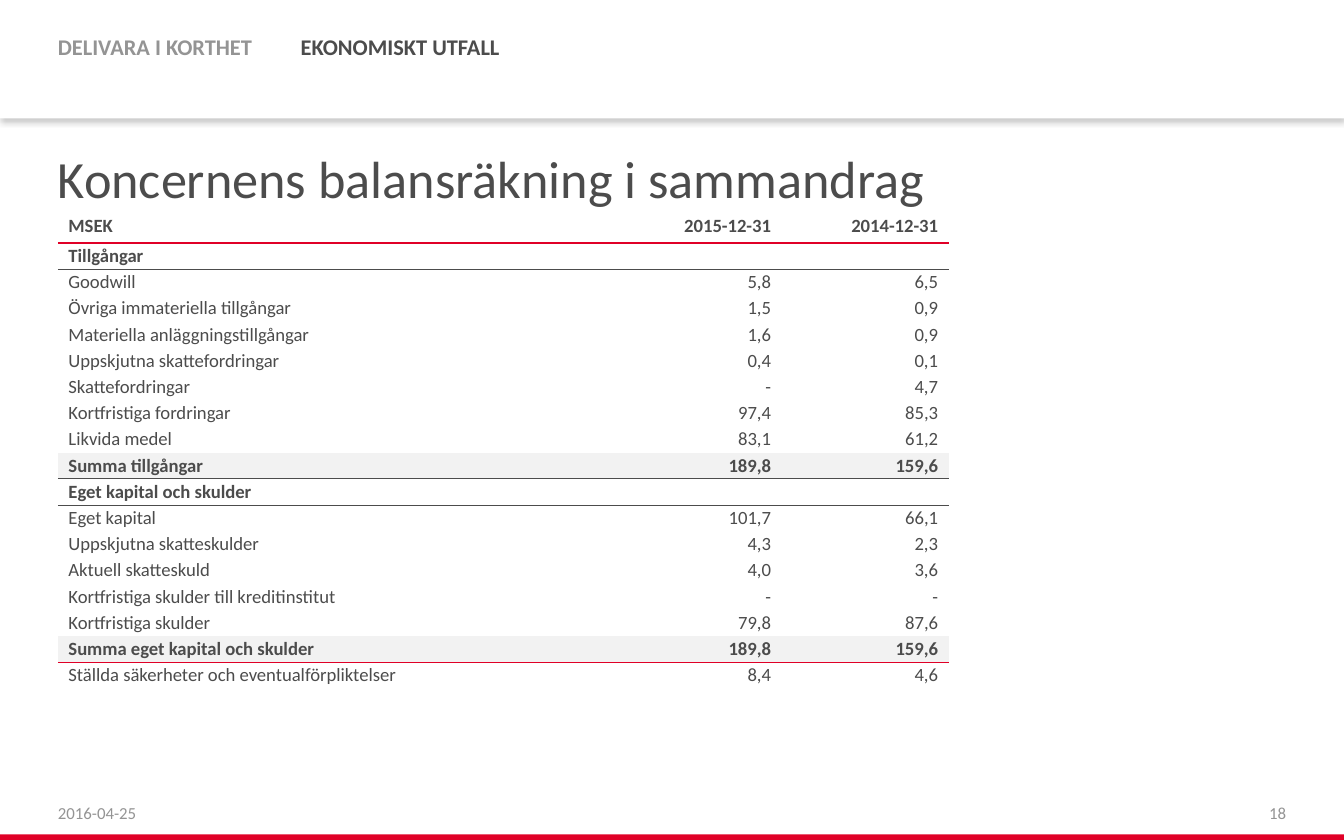
from dataclasses import dataclass
from lxml.etree import SubElement
from pptx import Presentation
from pptx.dml.color import RGBColor
from pptx.enum.shapes import MSO_SHAPE
from pptx.enum.text import MSO_ANCHOR, PP_ALIGN
from pptx.oxml.ns import qn
from pptx.util import Pt


@dataclass(frozen=True)
class Theme:
    font: str = "Calibri"
    ink: str = "4C4C4C"
    mute: str = "949494"
    red: str = "E00027"
    band: str = "F2F2F2"
    white: str = "FFFFFF"
    plain: str = "{2D5ABB26-0587-4C30-8999-92F81FD0307C}"
    title: float = 28
    nav: float = 12
    body: float = 10
    foot: float = 9


LEFT = 31
HEAD = 63.4
NAVS = [("DELIVARA I KORTHET", 25.2, "mute"), ("EKONOMISKT UTFALL", 155.3, "ink")]
COLS = [298.2, 89.5, 89.5]
ROWS = [
    ("head", "MSEK", "2015-12-31", "2014-12-31"),
    ("part", "Tillgångar", "", ""),
    ("item", "Goodwill", "5,8", "6,5"),
    ("item", "Övriga immateriella tillgångar", "1,5", "0,9"),
    ("item", "Materiella anläggningstillgångar", "1,6", "0,9"),
    ("item", "Uppskjutna skattefordringar", "0,4", "0,1"),
    ("item", "Skattefordringar", "-", "4,7"),
    ("item", "Kortfristiga fordringar", "97,4", "85,3"),
    ("item", "Likvida medel", "83,1", "61,2"),
    ("sum", "Summa tillgångar", "189,8", "159,6"),
    ("part", "Eget kapital och skulder", "", ""),
    ("item", "Eget kapital", "101,7", "66,1"),
    ("item", "Uppskjutna skatteskulder", "4,3", "2,3"),
    ("item", "Aktuell skatteskuld", "4,0", "3,6"),
    ("item", "Kortfristiga skulder till kreditinstitut", "-", "-"),
    ("item", "Kortfristiga skulder", "79,8", "87,6"),
    ("total", "Summa eget kapital och skulder", "189,8", "159,6"),
    ("item", "Ställda säkerheter och eventualförpliktelser", "8,4", "4,6"),
]
LINES = {"head": ("red", 1), "part": ("ink", 0.5), "sum": ("ink", 0.5), "total": ("red", 0.5)}


def write(frame, text, *, look, size, color, bold=False, align=PP_ALIGN.LEFT):
    par = frame.paragraphs[0]
    par.alignment = align
    if not text:
        SubElement(par._p, qn("a:endParaRPr"), sz=str(round(size * 100)))
        return
    run = par.add_run()
    run.text = text
    font = run.font
    font.name, font.size, font.bold = look.font, Pt(size), bold
    font.color.rgb = RGBColor.from_string(color)


def inset(item, left, top, right, bottom):
    item.margin_left, item.margin_top = Pt(left), Pt(top)
    item.margin_right, item.margin_bottom = Pt(right), Pt(bottom)


class Page:
    def __init__(self, slide, look):
        self.slide, self.look = slide, look

    def block(self, x, y, w, h, color):
        box = self.slide.shapes.add_shape(MSO_SHAPE.RECTANGLE, Pt(x), Pt(y), Pt(w), Pt(h))
        box.shadow.inherit = False
        box.fill.solid()
        box.fill.fore_color.rgb = RGBColor.from_string(color)
        box.line.fill.background()
        return box

    def shade(self, box):
        glow = SubElement(
            box._element.spPr.find(qn("a:effectLst")), qn("a:outerShdw"),
            blurRad=str(Pt(3)), dist=str(Pt(2)), dir="5400000", algn="t", rotWithShape="0",
        )
        tint = SubElement(glow, qn("a:srgbClr"), val="000000")
        SubElement(tint, qn("a:alpha"), val="20000")

    def title(self, text, x, y, w, h):
        box = self.slide.shapes.title
        box.left, box.top, box.width, box.height = Pt(x), Pt(y), Pt(w), Pt(h)
        frame = box.text_frame
        frame.word_wrap = True
        frame.vertical_anchor = MSO_ANCHOR.TOP
        inset(frame, 0, 15, 0, 2)
        write(frame, text, look=self.look, size=self.look.title, color=self.look.ink)

    def nav(self, text, x, color):
        frame = self.block(x, 13, 119, 25.2, self.look.white).text_frame
        frame.word_wrap = False
        frame.vertical_anchor = MSO_ANCHOR.TOP
        inset(frame, 5.8, 5, 5.8, 5)
        write(frame, text, look=self.look, size=self.look.nav, color=color, bold=True)

    def note(self, text, x, align):
        frame = self.slide.shapes.add_textbox(Pt(x), Pt(424), Pt(168), Pt(22.5)).text_frame
        frame.word_wrap = True
        frame.vertical_anchor = MSO_ANCHOR.BOTTOM
        inset(frame, 0, 5.8, 0, 5.8)
        write(frame, text, look=self.look, size=self.look.foot, color=self.look.mute, align=align)

    def rule(self, cell, color, width):
        line = SubElement(cell._tc.get_or_add_tcPr(), qn("a:lnB"), w=str(Pt(width)))
        SubElement(SubElement(line, qn("a:solidFill")), qn("a:srgbClr"), val=color)

    def cell(self, cell, kind, text, align):
        look = self.look
        head = kind == "head"
        inset(cell, 5.67, 0, 5.67, 2.8 if head else 0)
        cell.vertical_anchor = MSO_ANCHOR.BOTTOM if head else MSO_ANCHOR.MIDDLE
        if kind in LINES:
            color, width = LINES[kind]
            self.rule(cell, getattr(look, color), width)
        if kind in ("sum", "total"):
            cell.fill.solid()
            cell.fill.fore_color.rgb = RGBColor.from_string(look.band)
        else:
            cell.fill.background()
        write(cell.text_frame, text, look=look, size=look.body, color=look.ink,
              bold=kind != "item", align=align)

    def table(self, rows, cols, x, y, first, step):
        high = first + step * (len(rows) - 1)
        grid = self.slide.shapes.add_table(
            len(rows), len(cols), Pt(x), Pt(y), Pt(sum(cols)), Pt(high)).table
        grid.first_row = grid.horz_banding = False
        grid._tbl.tblPr.find(qn("a:tableStyleId")).text = self.look.plain
        for col, width in zip(grid.columns, cols):
            col.width = Pt(width)
        for r, (kind, *texts) in enumerate(rows):
            grid.rows[r].height = Pt(step if r else first)
            for c, text in enumerate(texts):
                align = PP_ALIGN.RIGHT if c else PP_ALIGN.LEFT
                self.cell(grid.cell(r, c), kind, text, align)


def main():
    deck = Presentation()
    deck.slide_width, deck.slide_height = Pt(720), Pt(450)
    look = Theme()
    page = Page(deck.slides.add_slide(deck.slide_layouts[5]), look)
    page.shade(page.block(0, 0, 720, HEAD, look.white))
    page.block(0, 447, 720, 3, look.red)
    for text, x, color in NAVS:
        page.nav(text, x, getattr(look, color))
    page.title("Koncernens balansräkning i sammandrag", LEFT, HEAD, 658, 51.8)
    page.table(ROWS, COLS, LEFT, 115.2, 15, 14.05)
    page.note("2016-04-25", LEFT, PP_ALIGN.LEFT)
    page.note("18", 720 - LEFT - 168, PP_ALIGN.RIGHT)
    deck.save("out.pptx")


if __name__ == "__main__":
    main()
